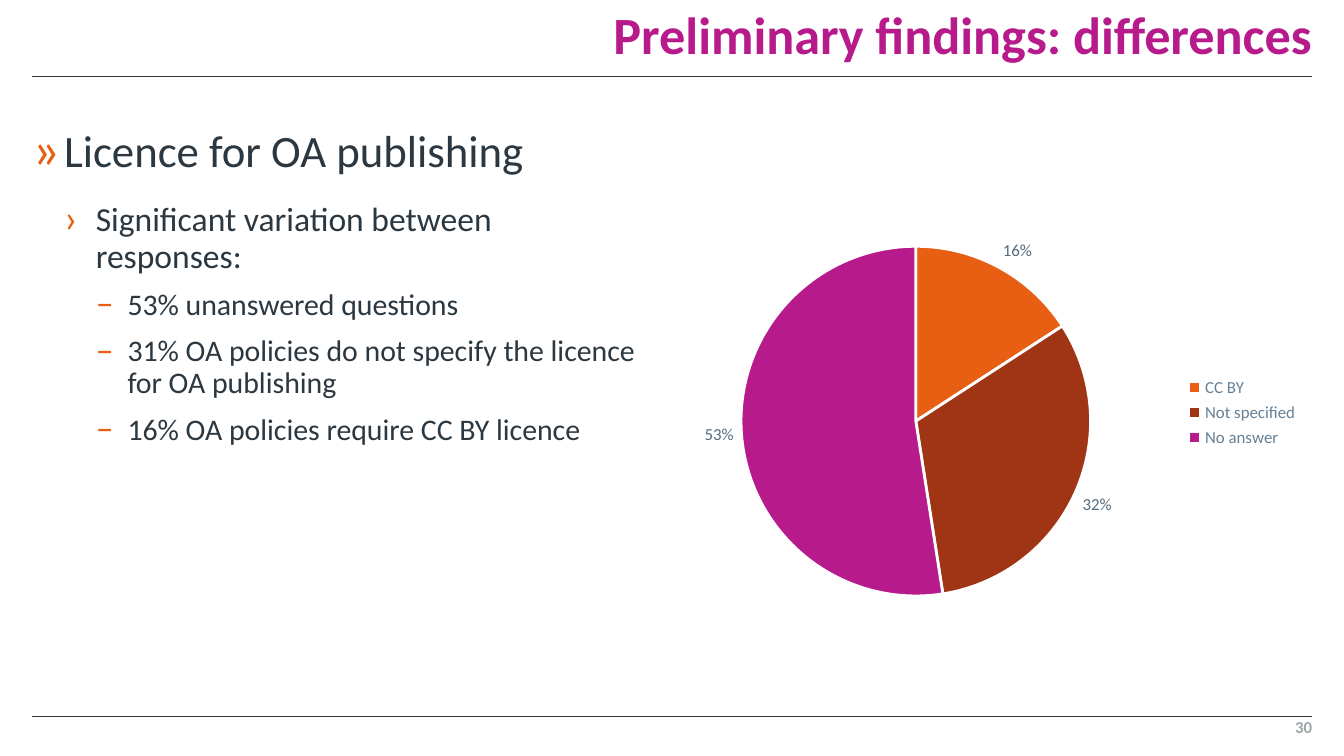
from lxml import etree
from pptx import Presentation
from pptx.chart.data import CategoryChartData
from pptx.dml.color import RGBColor
from pptx.enum.chart import XL_CHART_TYPE, XL_LABEL_POSITION, XL_LEGEND_POSITION
from pptx.enum.shapes import MSO_CONNECTOR
from pptx.enum.text import MSO_ANCHOR, MSO_AUTO_SIZE, PP_ALIGN
from pptx.oxml.ns import qn
from pptx.util import Cm, Pt

PIE = XL_CHART_TYPE.PIE
OUTSIDE_END = XL_LABEL_POSITION.OUTSIDE_END
LEGEND_RIGHT = XL_LEGEND_POSITION.RIGHT
STRAIGHT = MSO_CONNECTOR.STRAIGHT
TOP, BOTTOM = MSO_ANCHOR.TOP, MSO_ANCHOR.BOTTOM
NO_AUTOFIT = MSO_AUTO_SIZE.NONE
LEFT, RIGHT = PP_ALIGN.LEFT, PP_ALIGN.RIGHT

FONT = "Calibri"
DARK, MAGENTA, ORANGE, BROWN = "2C3841", "B71A8B", "E85E12", "9F3515"
MARGIN, CONTENT_WIDTH = 0.61, 24.18
INDENT = 0.6
LEVELS = [("»", 24), ("›", 18), ("–", 16)]
FINDINGS = [
    (0, "Licence for OA publishing"),
    (1, "Significant variation between responses:"),
    (2, "53% unanswered questions"),
    (2, "31% OA policies do not specify the licence for OA publishing"),
    (2, "16% OA policies require CC BY licence"),
]
LICENCES = [("CC BY", 16, ORANGE), ("Not specified", 32, BROWN), ("No answer", 53, MAGENTA)]


def color(value):
    return RGBColor.from_string(value)


def style_font(font, size, value, bold=False):
    font.name = FONT
    font.size = Pt(size)
    font.bold = bold
    font.color.rgb = color(value)


def place(shape, box):
    shape.left, shape.top, shape.width, shape.height = [Cm(length) for length in box]


def prepare_frame(frame, anchor):
    frame.margin_left = frame.margin_right = frame.margin_top = frame.margin_bottom = 0
    frame.word_wrap = True
    frame.auto_size = NO_AUTOFIT
    frame.vertical_anchor = anchor


def add_rule(page, left, top, width):
    rule = page.shapes.add_connector(STRAIGHT, Cm(left), Cm(top), Cm(left + width), Cm(top))
    rule.line.color.rgb = color(DARK)
    rule.line.width = Pt(0.5)
    etree.SubElement(rule._element.spPr, qn("a:effectLst"))


def fill_title(title, box, text):
    place(title, box)
    frame = title.text_frame
    prepare_frame(frame, BOTTOM)
    frame.text = text
    para = frame.paragraphs[0]
    para.alignment = RIGHT
    para.line_spacing = 0.9
    style_font(para.runs[0].font, 28, MAGENTA, True)


def add_bullet(para, level, symbol):
    properties = para._p.get_or_add_pPr()
    properties.set("marL", str(Cm(INDENT * (level + 1))))
    properties.set("indent", str(Cm(-INDENT)))
    bullet_color = etree.SubElement(properties, qn("a:buClr"))
    etree.SubElement(bullet_color, qn("a:srgbClr"), val=ORANGE)
    etree.SubElement(properties, qn("a:buSzPct"), val="120000")
    etree.SubElement(properties, qn("a:buFont"), typeface=FONT)
    etree.SubElement(properties, qn("a:buChar"), char=symbol)


def fill_findings(body, box):
    place(body, box)
    frame = body.text_frame
    prepare_frame(frame, TOP)
    frame.text = "\n".join(text for level, text in FINDINGS)
    for para, (level, text) in zip(frame.paragraphs, FINDINGS):
        symbol, size = LEVELS[level]
        add_bullet(para, level, symbol)
        para.level = level
        para.alignment = LEFT
        para.line_spacing = 0.9
        para.space_before = Pt(7.5 if level else 0)
        para.space_after = Pt(0 if level else 6)
        style_font(para.runs[0].font, size, DARK)


def add_licence_chart(page, box):
    data = CategoryChartData()
    data.categories = [name for name, share, fill in LICENCES]
    data.add_series("Series 1", [share for name, share, fill in LICENCES])
    chart = page.shapes.add_chart(PIE, *[Cm(length) for length in box], data).chart
    style_font(chart.font, 10, DARK)
    chart.has_title = False
    chart.has_legend = True
    chart.legend.position = LEGEND_RIGHT
    chart.legend.include_in_layout = False
    style_font(chart.legend.font, 9, "658095")
    plot = chart.plots[0]
    plot.vary_by_categories = True
    for index, (name, share, fill) in enumerate(LICENCES):
        slice_format = plot.series[0].points[index].format
        slice_format.fill.solid()
        slice_format.fill.fore_color.rgb = color(fill)
        slice_format.line.color.rgb = color("FFFFFF")
        slice_format.line.width = Pt(1.5)
    plot.has_data_labels = True
    labels = plot.data_labels
    labels.show_value = True
    labels.number_format = '0"%"'
    labels.number_format_is_linked = False
    labels.position = OUTSIDE_END
    style_font(labels.font, 9, "546C7D")


def add_page_number(page, box, number):
    frame = page.shapes.add_textbox(*[Cm(length) for length in box]).text_frame
    prepare_frame(frame, TOP)
    frame.text = number
    para = frame.paragraphs[0]
    para.alignment = RIGHT
    style_font(para.runs[0].font, 9, "9BA7A8", True)


def main():
    deck = Presentation()
    deck.slide_width, deck.slide_height = Cm(25.4), Cm(14.28)
    page = deck.slides.add_slide(deck.slide_layouts[1])
    for top in (1.45, 13.54):
        add_rule(page, MARGIN, top, CONTENT_WIDTH)
    fill_title(page.shapes.title, (7.7, 0, 17.09, 1.24), "Preliminary findings: differences")
    fill_findings(page.placeholders[1], (MARGIN, 2.44, 11.4, 10.69))
    add_page_number(page, (22.8, 13.54, 2, 0.46), "30")
    add_licence_chart(page, (12.09, 3.99, 12.7, 7.62))
    deck.save("out.pptx")


if __name__ == "__main__":
    main()
